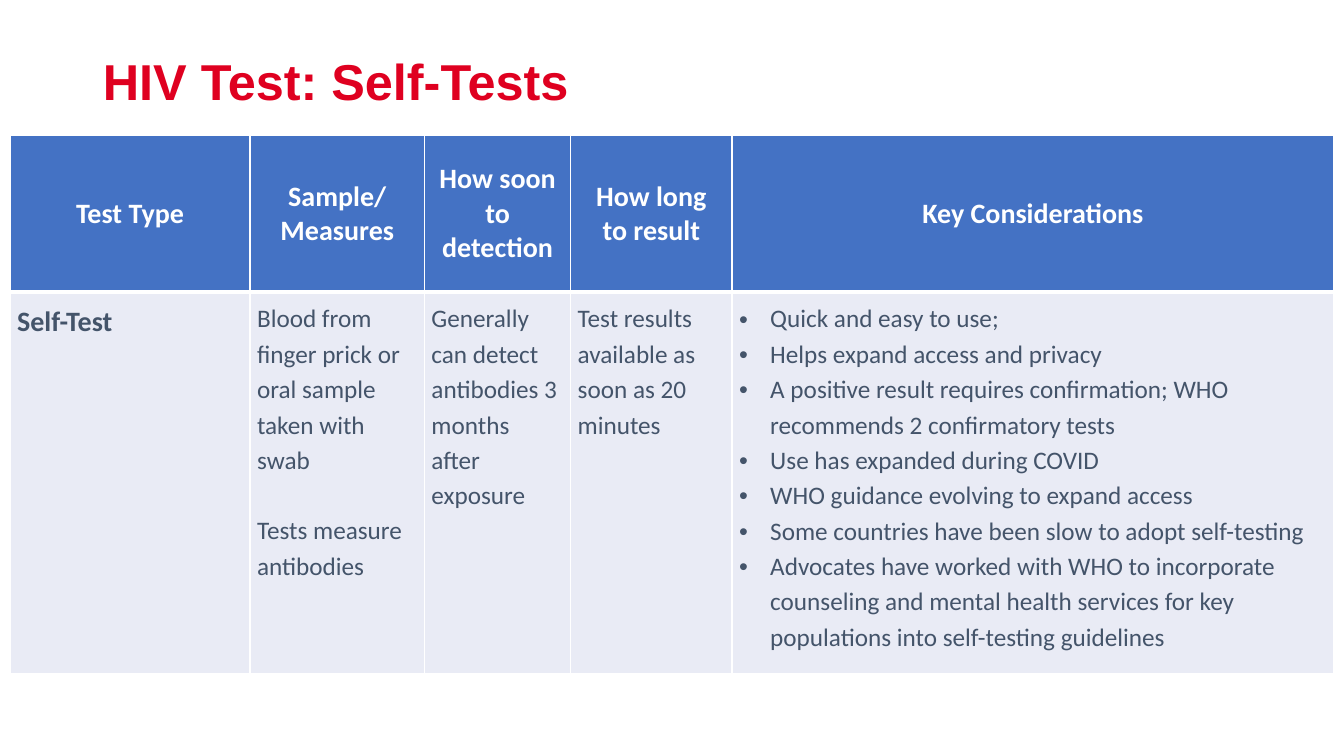
from lxml.etree import SubElement
from pptx import Presentation
from pptx.dml.color import RGBColor
from pptx.enum.text import MSO_ANCHOR as ANCHOR, PP_ALIGN as ALIGN
from pptx.oxml.ns import qn
from pptx.util import Inches, Pt

RED = RGBColor(0xDF, 0x00, 0x20)
BLUE = RGBColor(0x44, 0x72, 0xC4)
PALE = RGBColor(0xE9, 0xEB, 0xF5)
SLATE = RGBColor(0x44, 0x54, 0x6A)
WHITE = RGBColor(0xFF, 0xFF, 0xFF)

COL_WIDTHS = [2.38, 1.73, 1.45, 1.6, 5.97]
ROW_HEIGHTS = [1.56, 3.78]
HEADERS = [
    ["Test Type"],
    ["Sample/", "Measures"],
    ["How soon to detection"],
    ["How long to result"],
    ["Key Considerations"],
]
SELF_TEST = [
    ["Self-Test"],
    ["Blood from finger prick or oral sample taken with swab", "Tests measure antibodies"],
    ["Generally can detect antibodies 3 months after exposure"],
    ["Test results available as soon as 20 minutes"],
    [
        "Quick and easy to use;",
        "Helps expand access and privacy",
        "A positive result requires confirmation; WHO recommends 2 confirmatory tests",
        "Use has expanded during COVID",
        "WHO guidance evolving to expand access",
        "Some countries have been slow to adopt self-testing",
        "Advocates have worked with WHO to incorporate counseling and mental health "
        "services for key populations into self-testing guidelines",
    ],
]
CONSIDERATIONS = len(COL_WIDTHS) - 1


def add_borders(cell, **widths):
    """Draw white cell borders; widths are points keyed by L, R, T, B."""
    tc_pr = cell._tc.get_or_add_tcPr()
    for side, width in widths.items():
        ln = SubElement(tc_pr, qn(f"a:ln{side}"), w=str(Pt(width)))
        fill = SubElement(ln, qn("a:solidFill"))
        SubElement(fill, qn("a:srgbClr"), val=str(WHITE))


def add_bullet(p):
    p_pr = p._p.get_or_add_pPr()
    indent = Inches(0.31)
    p_pr.set("marL", str(indent))
    p_pr.set("indent", str(-indent))
    SubElement(p_pr, qn("a:buFont"), typeface="Arial")
    SubElement(p_pr, qn("a:buChar"), char="•")


prs = Presentation()
prs.slide_width, prs.slide_height = Inches(13.33), Inches(7.5)
s = prs.slides.add_slide(prs.slide_layouts[5])

title = s.shapes.title
title.left, title.top = Inches(0.92), Inches(0.4)
title.width, title.height = Inches(11.9), Inches(0.8)
tf = title.text_frame
tf.text = "HIV Test: Self-Tests"
tf.vertical_anchor = ANCHOR.MIDDLE
p = tf.paragraphs[0]
p.alignment = ALIGN.LEFT
p.font.name, p.font.size, p.font.bold = "Arial", Pt(36), True
p.font.color.rgb = RED

table = s.shapes.add_table(
    len(ROW_HEIGHTS), len(COL_WIDTHS), Inches(0.1), Inches(1.34),
    Inches(sum(COL_WIDTHS)), Inches(sum(ROW_HEIGHTS))).table
for column, width in zip(table.columns, COL_WIDTHS):
    column.width = Inches(width)
for row, height in zip(table.rows, ROW_HEIGHTS):
    row.height = Inches(height)

for r, texts in enumerate([HEADERS, SELF_TEST]):
    is_header = r == 0
    for c, lines in enumerate(texts):
        cell = table.cell(r, c)
        if is_header:
            add_borders(cell, L=1, R=1, T=1, B=3)
            cell.vertical_anchor = ANCHOR.MIDDLE
        else:
            add_borders(cell, L=1, R=1, T=3, B=1)
            cell.margin_left = cell.margin_right = Inches(0.07)
            cell.margin_top = cell.margin_bottom = Inches(0.07)
        cell.fill.solid()
        cell.fill.fore_color.rgb = BLUE if is_header else PALE

        cell.text = "\n".join(lines)
        for i, p in enumerate(cell.text_frame.paragraphs):
            if is_header:
                p.alignment = ALIGN.CENTER
            else:
                p.line_spacing = 1.15
                if c == CONSIDERATIONS:
                    add_bullet(p)
                elif i > 0:
                    p.space_before = Pt(25)
            strong = is_header or c == 0
            p.font.name, p.font.bold = "Calibri", strong
            p.font.size = Pt(20 if strong else 18)
            p.font.color.rgb = WHITE if is_header else SLATE

prs.save("out.pptx")
